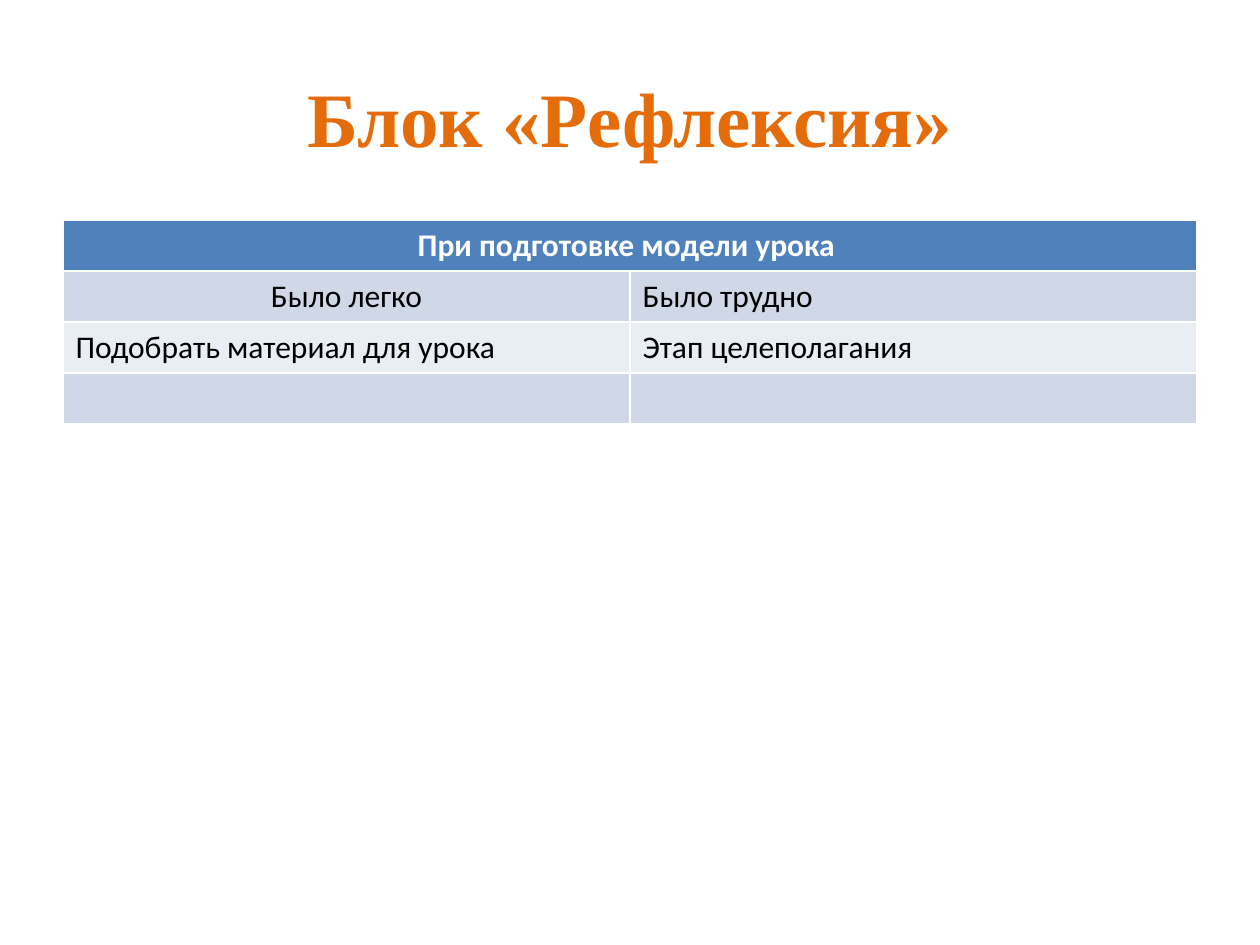
from pptx import Presentation, util as u
from pptx.dml.color import RGBColor
from pptx.enum import text as t

PX = u.Inches(1) / 126


def paint(color_format, hex_color):
    color_format.rgb = RGBColor.from_string(hex_color)


def write(frame, words, font="Calibri", size=18, color="000000", bold=False,
          align=t.PP_ALIGN.LEFT):
    paragraph = frame.paragraphs[0]
    paragraph.alignment = align
    run = paragraph.add_run()
    run.text = words
    run.font.name = font
    run.font.size = u.Pt(size)
    run.font.bold = bold
    paint(run.font.color, color)


deck = Presentation()
deck.slide_width, deck.slide_height = int(1260 * PX), int(945 * PX)
slide = deck.slides.add_slide(deck.slide_layouts[6])

# Title
title = slide.shapes.add_textbox(
    *(int(n * PX) for n in (63, 38, 1134, 158))).text_frame
title.word_wrap = True
title.vertical_anchor = t.MSO_ANCHOR.MIDDLE
write(title, "Блок «Рефлексия»", font="Times New Roman", size=44,
      color="E46C0A", bold=True, align=t.PP_ALIGN.CENTER)

# Reflection table: the default style supplies the white rules
rows = [
    ("При подготовке модели урока ", ""),
    ("Было легко", "Было трудно"),
    ("Подобрать материал для урока", "Этап целеполагания"),
    ("", ""),
]
row_fills = ["4F81BD", "D0D8E8", "E9EDF4", "D0D8E8"]
reflection = slide.shapes.add_table(
    len(rows), 2, *(int(n * PX) for n in (63, 220, 1134, 204))).table
reflection.cell(0, 0).merge(reflection.cell(0, 1))

for r, (row, row_fill) in enumerate(zip(rows, row_fills)):
    for c, words in enumerate(row):
        cell = reflection.cell(r, c)
        cell.fill.solid()
        paint(cell.fill.fore_color, row_fill)
        if words:
            header = r == 0
            centred = c == 0 and r < 2
            write(cell.text_frame, words, bold=header,
                  color="FFFFFF" if header else "000000",
                  align=t.PP_ALIGN.CENTER if centred else t.PP_ALIGN.LEFT)

deck.save("out.pptx")
